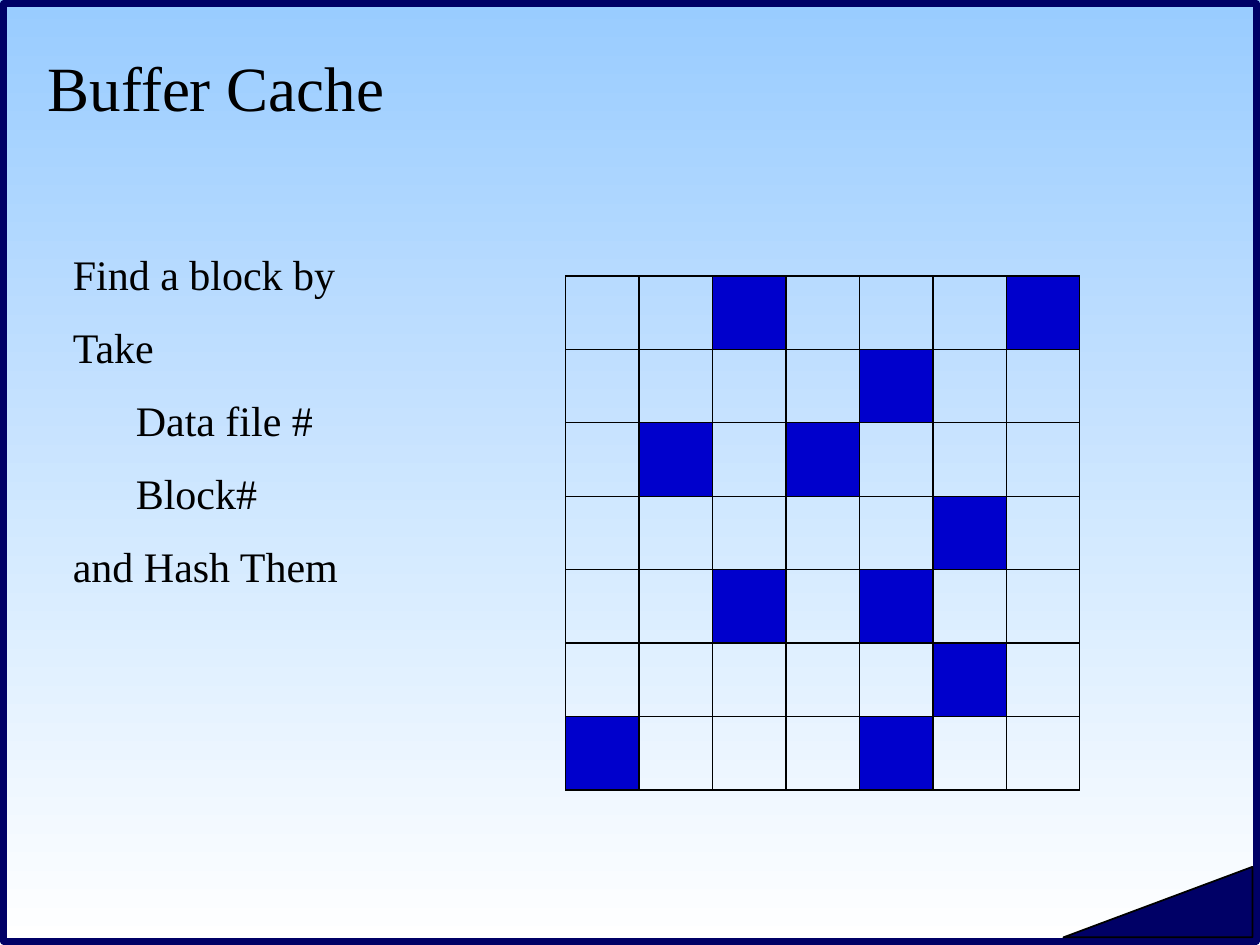
from pptx import Presentation
from pptx.dml.color import RGBColor
from pptx.enum.shapes import MSO_SHAPE
from pptx.enum.text import MSO_ANCHOR, MSO_AUTO_SIZE, PP_ALIGN
from pptx.util import Inches, Pt

RECT = MSO_SHAPE.RECTANGLE
TRIANGLE = MSO_SHAPE.ISOSCELES_TRIANGLE
MIDDLE = MSO_ANCHOR.MIDDLE
LEFT = PP_ALIGN.LEFT
GROW = MSO_AUTO_SIZE.SHAPE_TO_FIT_TEXT
TITLE_ONLY = 5

FONT = "Times New Roman"
BLACK, NAVY, BLUE = "000000", "000066", "0000CC"
GRID_LEFT, GRID_TOP, GRID_SIZE, CELLS = 4.49, 2.19, 4.08, 7
USED_BLOCKS = [(0, 2), (0, 6), (1, 4), (2, 1), (2, 3), (3, 5),
               (4, 2), (4, 4), (5, 5), (6, 0), (6, 4)]
LINES = ["Find a block by", "Take", "\tData file #", "\tBlock#", "and Hash Them"]


def rgb(value):
    """Turn a hex string into a colour."""
    return RGBColor.from_string(value)


class Deck:
    """Hold the style and the current slide."""

    def __init__(self, prs):
        """Start a title-only slide."""
        self.s = prs.slides.add_slide(prs.slide_layouts[TITLE_ONLY])

    def background(self, top, bottom):
        """Shade the background from top to bottom."""
        fill = self.s.background.fill
        fill.gradient()
        fill.gradient_angle = 270
        for stop, colour in zip(fill.gradient_stops, (top, bottom)):
            stop.color.rgb = rgb(colour)

    def shape(self, kind, box, fill=None, line=BLACK, width=0.75, parent=None):
        """Add a preset shape to the slide or to a group."""
        shapes = (parent or self.s).shapes
        sp = shapes.add_shape(kind, *map(Inches, box))
        sp.shadow.inherit = False
        if fill:
            sp.fill.solid()
            sp.fill.fore_color.rgb = rgb(fill)
        else:
            sp.fill.background()
        sp.line.color.rgb = rgb(line)
        sp.line.width = Pt(width)
        return sp

    def format(self, p, size):
        """Set the font and alignment of a paragraph."""
        p.alignment = LEFT
        p.font.name = FONT
        p.font.size = Pt(size)
        p.font.color.rgb = rgb(BLACK)

    def title(self, text, box):
        """Place and fill the title."""
        sp = self.s.shapes.title
        sp.left, sp.top, sp.width, sp.height = map(Inches, box)
        tf = sp.text_frame
        tf.text = text
        tf.vertical_anchor = MIDDLE
        self.format(tf.paragraphs[0], 36)

    def text(self, lines, box):
        """Add a text box with one paragraph per line."""
        tf = self.s.shapes.add_textbox(*map(Inches, box)).text_frame
        tf.word_wrap = True
        tf.auto_size = GROW
        tf.text = "\n".join(lines)
        for p in tf.paragraphs:
            self.format(p, 24)
            p.space_before = Pt(13)

    def grid(self, left, top, size, count, used):
        """Add a grouped grid of rows and columns with filled cells."""
        group = self.s.shapes.add_group_shape()
        step = size / count
        for i in range(count):
            self.shape(RECT, (left, top + i * step, size, step), parent=group)
        for i in range(count):
            self.shape(RECT, (left + i * step, top, step, size), parent=group)
        for row, col in used:
            box = (left + col * step, top + row * step, step, step)
            self.shape(RECT, box, BLUE, parent=group)


def main():
    """Build the slide and save it."""
    prs = Presentation()
    prs.slide_width, prs.slide_height = Inches(10), Inches(7.5)
    deck = Deck(prs)
    deck.background("99CCFF", "FFFFFF")
    deck.shape(RECT, (0.03, 0.03, 9.94, 7.44), line=NAVY, width=4)
    corner = deck.shape(TRIANGLE, (8.44, 6.88, 1.5, 0.56), NAVY, width=1)
    corner.adjustments[0] = 1
    deck.title("Buffer Cache", (0.28, 0.28, 8.98, 0.81))
    deck.grid(GRID_LEFT, GRID_TOP, GRID_SIZE, CELLS, USED_BLOCKS)
    deck.text(LINES, (0.48, 1.92, 3.76, 2.9))
    prs.save("out.pptx")


if __name__ == "__main__":
    main()
